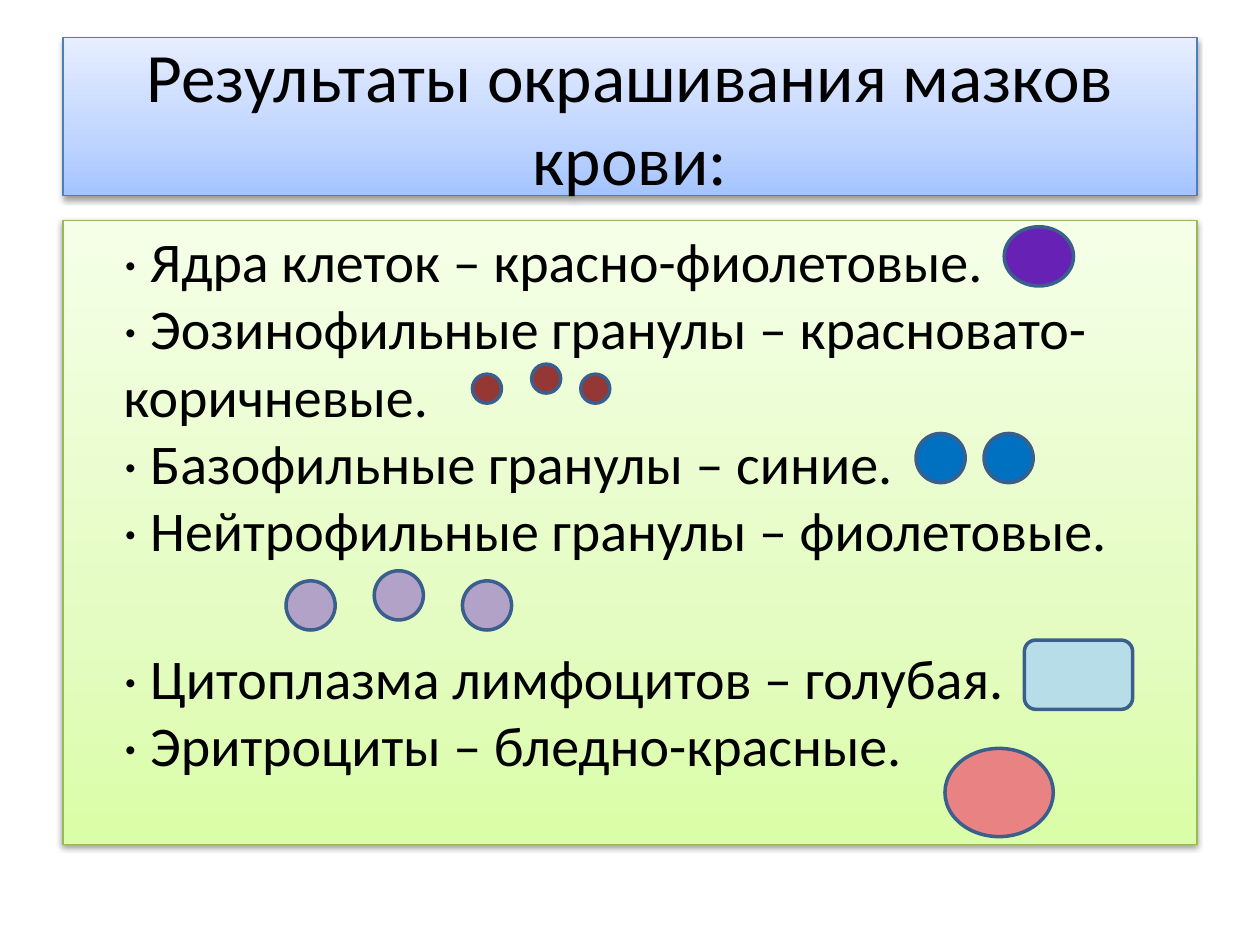
from copy import deepcopy

from lxml import etree
from pptx import Presentation
from pptx.dml.color import RGBColor
from pptx.enum.shapes import MSO_SHAPE
from pptx.enum.text import MSO_ANCHOR, PP_ALIGN
from pptx.oxml.ns import qn
from pptx.util import Inches, Pt

RECT, OVAL, ROUND = MSO_SHAPE.RECTANGLE, MSO_SHAPE.OVAL, MSO_SHAPE.ROUNDED_RECTANGLE
LEFT, CENTER = PP_ALIGN.LEFT, PP_ALIGN.CENTER
TOP, MIDDLE = MSO_ANCHOR.TOP, MSO_ANCHOR.MIDDLE

# Content
TITLE = "Результаты окрашивания мазков крови:"
RESULTS = [
    "· Ядра клеток – красно-фиолетовые.",
    "· Эозинофильные гранулы – красновато-коричневые.",
    "· Базофильные гранулы – синие.",
    "· Нейтрофильные гранулы – фиолетовые.",
    "· Цитоплазма лимфоцитов – голубая.",
    "· Эритроциты – бледно-красные.",
]
GAP_BEFORE = {4: 46}  # room for the violet granules, in points

# Colour samples: shape, colour name, size, positions
SAMPLES = [
    (OVAL, "nucleus", (0.55, 0.47), [(7.97, 1.8)]),
    (OVAL, "eosinophil", (0.23, 0.23), [(3.75, 2.97), (4.22, 2.89), (4.61, 2.97)]),
    (OVAL, "basophil", (0.39, 0.39), [(7.27, 3.44), (7.81, 3.44)]),
    (OVAL, "neutrophil", (0.39, 0.39), [(2.27, 4.61), (2.97, 4.53), (3.67, 4.61)]),
    (ROUND, "lymphocyte", (0.86, 0.55), [(8.13, 5.08)]),
    (OVAL, "erythrocyte", (0.86, 0.7), [(7.5, 5.94)]),
]

THEME = {
    "font": "Calibri", "text": "000000", "title_size": 39.6, "body_size": 32,
    "title_fill": [(0, "A4C4FF"), (35, "BFD4FF"), (100, "E6EEFF")],
    "title_line": "4B7EBC",
    "body_fill": [(0, "DAFDA7"), (35, "E4FCC2"), (100, "F5FFE7")],
    "body_line": "98B955",
    "sample_line": "3A5F8C",
    "nucleus": "6721B5", "eosinophil": "953735", "basophil": "0070C0",
    "neutrophil": "B3A2C7", "lymphocyte": "B7DEE8", "erythrocyte": "E98383",
}


def rgb(name):
    return RGBColor.from_string(THEME[name])


def add_shape(slide, kind, box, line, width):
    s = slide.shapes.add_shape(kind, *(Inches(v) for v in box))
    s.shadow.inherit = False
    s.line.color.rgb = rgb(line)
    s.line.width = Pt(width)
    return s


def set_gradient(s, stops):
    s.fill.gradient()
    s.fill.gradient_angle = 90
    gs_list = s._element.spPr.find(".//" + qn("a:gsLst"))
    while len(gs_list) < len(stops):
        gs_list.append(deepcopy(gs_list[0]))
    for stop, (position, color) in zip(s.fill.gradient_stops, stops):
        stop.position = position / 100
        stop.color.rgb = RGBColor.from_string(color)


def add_shadow(s):
    effects = s._element.spPr.find(qn("a:effectLst"))
    shadow = etree.SubElement(effects, qn("a:outerShdw"), blurRad=str(Pt(3.1)),
                              dist=str(Pt(1.6)), dir="5400000", rotWithShape="0")
    color = etree.SubElement(shadow, qn("a:srgbClr"), val="000000")
    etree.SubElement(color, qn("a:alpha"), val="38000")


def add_panel(slide, box, name):
    s = add_shape(slide, RECT, box, name + "_line", 0.75)
    set_gradient(s, THEME[name + "_fill"])
    add_shadow(s)
    return s


def add_text(s, lines, *, size, align=LEFT, anchor=TOP, margin=0.1, gaps=None):
    tf = s.text_frame
    tf.word_wrap = True
    tf.vertical_anchor = anchor
    tf.margin_left = Inches(margin)
    for i, line in enumerate(lines):
        p = tf.paragraphs[0] if i == 0 else tf.add_paragraph()
        p.alignment = align
        p.space_before = Pt((gaps or {}).get(i, 0))
        r = p.add_run()
        r.text = line
        r.font.name, r.font.size = THEME["font"], Pt(size)
        r.font.color.rgb = rgb("text")


prs = Presentation()
prs.slide_width, prs.slide_height = Inches(10), Inches(7.5)
slide = prs.slides.add_slide(prs.slide_layouts[6])

# Title and list panels
title = add_panel(slide, (0.5, 0.3, 9, 1.25), "title")
add_text(title, [TITLE], size=THEME["title_size"], align=CENTER, anchor=MIDDLE)
body = add_panel(slide, (0.5, 1.75, 9, 4.95), "body")
add_text(body, RESULTS, size=THEME["body_size"], margin=0.48, gaps=GAP_BEFORE)

# Colour samples beside the lines
for kind, color, size, positions in SAMPLES:
    for position in positions:
        s = add_shape(slide, kind, position + size, "sample_line", 2)
        s.fill.solid()
        s.fill.fore_color.rgb = rgb(color)

prs.save("out.pptx")
